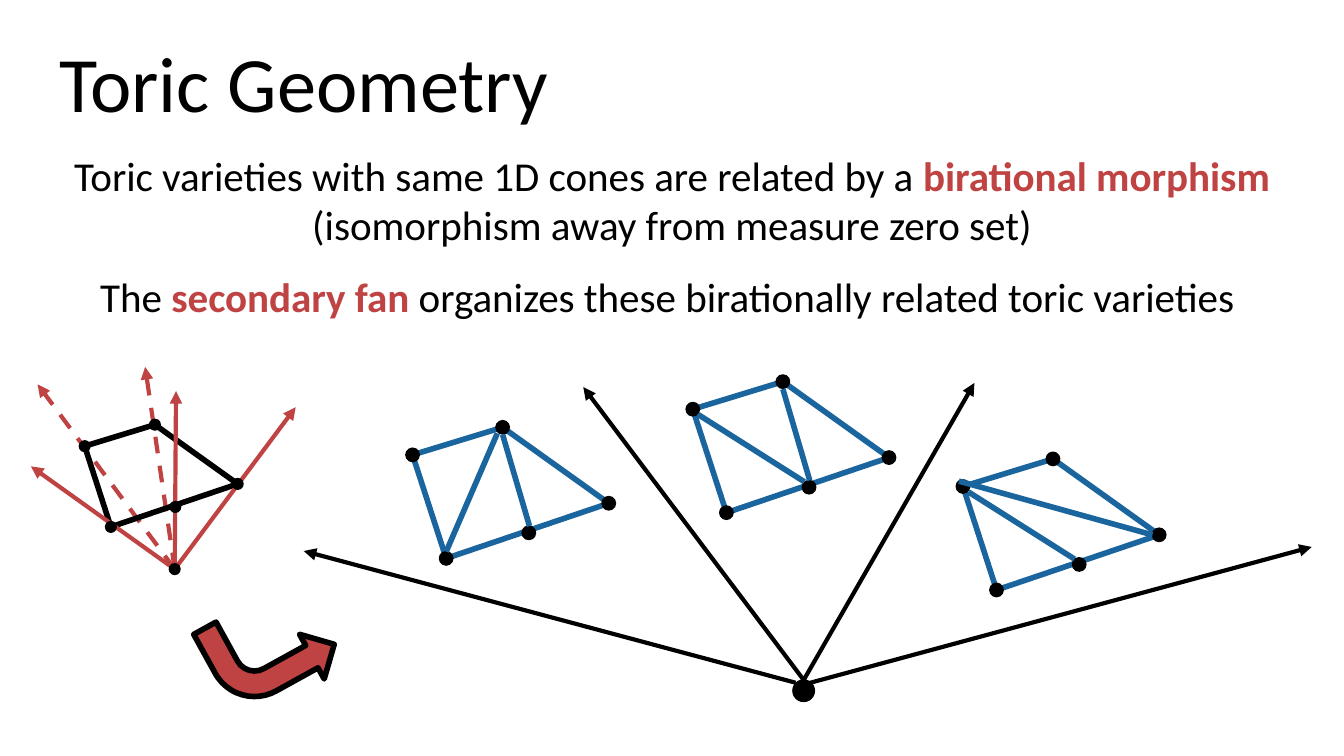
from dataclasses import dataclass

from lxml.etree import SubElement
from pptx import Presentation
from pptx.dml.color import RGBColor
from pptx.enum.dml import MSO_LINE
from pptx.enum.shapes import MSO_CONNECTOR, MSO_SHAPE
from pptx.enum.text import MSO_ANCHOR, PP_ALIGN
from pptx.oxml.ns import qn
from pptx.util import Inches, Pt

COLORS = {"ink": "000000", "red": "BF4342", "blue": "1A659E"}
FONT = "Calibri"
CELL = 0.1  # inches: the 16:9 slide is a grid of 100 columns by 56.25 rows
COLUMNS = 100
ROWS = COLUMNS * 9 / 16

Point = tuple[float, float]


@dataclass(frozen=True)
class Stroke:
    color: str
    width: float
    arrow: bool = False
    dashed: bool = False


@dataclass(frozen=True)
class Polygon:
    """A five-point polygon, placed by its left vertex."""
    left: Point
    scale: float = 1
    diagonals: tuple[str, ...] = ()

    def at(self, offset: Point) -> Point:
        return tuple(start + self.scale * step for start, step in zip(self.left, offset))


# Offsets from the left vertex, in grid cells
VERTICES = {"left": (0, 0), "top": (6.7, -2.05), "bottom": (2.5, 7.7),
            "middle": (8.65, 5.8), "right": (14.6, 3.6)}
OUTLINE = ("top", "right", "bottom", "left", "top")
DIAGONALS = {
    "top-bottom": ((6.3, -1.6), (2.5, 7.2)),
    "top-middle": ((6.7, -1.5), (8.7, 5.3)),
    "left-middle": ((0.4, 0.4), (8.3, 5.4)),
    "left-right": ((-0.3, -0.4), (14.1, 3.6)),
}
TRIANGULATIONS = (
    Polygon((30.7, 33.85), diagonals=("top-bottom", "top-middle")),
    Polygon((51.55, 30.45), diagonals=("left-middle", "top-middle")),
    Polygon((71.65, 36.2), diagonals=("left-middle", "left-right")),
)
CONE_BASE = Polygon((6.3, 33.2), scale=0.78)
CONE_APEX = (13, 42.35)
HIDDEN_RAY_TIPS = ((2.8, 28.6), (10.8, 27.3))
VISIBLE_RAY_TIPS = ((2.3, 34.7), (22, 30.3), (13.1, 29.1))
FAN_APEX = (59.8, 51.4)
FAN_RAYS = (((59.8, 50.6), (43.4, 28.8)), ((60.3, 50.8), (97.6, 40.7)),
            ((59.8, 50.6), (72.5, 28.5)), ((59.2, 50.8), (22.6, 41)))

EDGE = Stroke("blue", 3)
BASE_EDGE = Stroke("ink", 3)
FAN_RAY = Stroke("ink", 2.25, arrow=True)
CONE_RAY = Stroke("red", 2.25, arrow=True)
HIDDEN_RAY = Stroke("red", 2.25, arrow=True, dashed=True)

BODY = (
    (("Toric varieties with same 1D cones are related by a ", False),
     ("birational morphism", True),
     (" (isomorphism away from measure zero set)", False)),
    (("The ", False), ("secondary fan", True),
     (" organizes these birationally related toric varieties ", False)),
)


def cells(*counts: float) -> list[int]:
    return [Inches(count * CELL) for count in counts]


def rgb(name: str) -> RGBColor:
    return RGBColor.from_string(COLORS[name])


def apply_format(target, values: dict) -> None:
    for name, value in values.items():
        setattr(target, name, value)


def place(shape, left: float, top: float, width: float, height: float) -> None:
    box = cells(left, top, width, height)
    apply_format(shape, dict(zip(("left", "top", "width", "height"), box)))


def format_frame(frame) -> None:
    margin = Inches(0.1)
    apply_format(frame, {"word_wrap": True, "margin_left": margin, "margin_right": margin,
                         "margin_top": margin, "margin_bottom": margin})


def add_run(paragraph, text: str, size: float, color: str = "ink", bold: bool = False) -> None:
    run = paragraph.add_run()
    run.text = text
    apply_format(run.font, {"name": FONT, "size": Pt(size), "bold": bold})
    run.font.color.rgb = rgb(color)


def add_line(shapes, start: Point, end: Point, stroke: Stroke) -> None:
    connector = shapes.add_connector(MSO_CONNECTOR.STRAIGHT, *cells(*start, *end))
    connector.line.color.rgb = rgb(stroke.color)
    connector.line.width = Pt(stroke.width)
    if stroke.dashed:
        connector.line.dash_style = MSO_LINE.DASH
    properties = connector._element.spPr
    if stroke.arrow:
        SubElement(properties.find(qn("a:ln")), qn("a:tailEnd"), type="triangle")
    SubElement(properties, qn("a:effectLst"))


def style_shape(shape, fill: str, line_width: float) -> None:
    shape.shadow.inherit = False
    shape.fill.solid()
    shape.fill.fore_color.rgb = rgb(fill)
    shape.line.color.rgb = rgb("ink")
    shape.line.width = Pt(line_width)


def add_dot(shapes, center: Point, size: float) -> None:
    corner = [value - size / 2 for value in center]
    dot = shapes.add_shape(MSO_SHAPE.OVAL, *cells(*corner, size, size))
    style_shape(dot, "ink", 0.75)


def add_outline(shapes, polygon: Polygon, stroke: Stroke) -> None:
    corners = [polygon.at(VERTICES[name]) for name in OUTLINE]
    for start, end in zip(corners, corners[1:]):
        add_line(shapes, start, end, stroke)


def add_triangulation(shapes, polygon: Polygon) -> None:
    add_outline(shapes, polygon, EDGE)
    for offset in VERTICES.values():
        add_dot(shapes, polygon.at(offset), 1)
    for name in polygon.diagonals:
        start, end = DIAGONALS[name]
        add_line(shapes, polygon.at(start), polygon.at(end), EDGE)


def add_cone(shapes) -> None:
    for tip in HIDDEN_RAY_TIPS:
        add_line(shapes, CONE_APEX, tip, HIDDEN_RAY)
    add_outline(shapes, CONE_BASE, BASE_EDGE)
    for tip in VISIBLE_RAY_TIPS:
        add_line(shapes, CONE_APEX, tip, CONE_RAY)
    for offset in VERTICES.values():
        add_dot(shapes, CONE_BASE.at(offset), 0.8)
    add_dot(shapes, CONE_APEX, 0.8)


def add_fan(shapes) -> None:
    add_dot(shapes, FAN_APEX, 1.6)
    for start, tip in FAN_RAYS:
        add_line(shapes, start, tip, FAN_RAY)


def add_bent_arrow(shapes) -> None:
    arrow = shapes.add_shape(MSO_SHAPE.BENT_ARROW, *cells(15.7, 44.6, 8.8, 7.6))
    for index, value in enumerate((0.25, 0.25, 0.25, 0.44)):
        arrow.adjustments[index] = value
    arrow.rotation = 151.1
    arrow._element.spPr.find(qn("a:xfrm")).set("flipH", "1")
    style_shape(arrow, "red", 3)


def add_title(shapes) -> None:
    title = shapes.title
    place(title, 3.4, 1.5, 93.2, 9.3)
    format_frame(title.text_frame)
    title.text_frame.vertical_anchor = MSO_ANCHOR.TOP
    paragraph = title.text_frame.paragraphs[0]
    paragraph.alignment = PP_ALIGN.LEFT
    add_run(paragraph, "Toric Geometry", 42)


def add_body(shapes) -> None:
    frame = shapes.add_textbox(*cells(0.9, 10.2, 98.2, 14.8)).text_frame
    format_frame(frame)
    for index, parts in enumerate(BODY):
        paragraph = frame.add_paragraph() if index else frame.paragraphs[0]
        apply_format(paragraph, {"alignment": PP_ALIGN.CENTER,
                                 "space_before": Pt(12 if index else 0)})
        for text, is_term in parts:
            add_run(paragraph, text, 22, "red" if is_term else "ink", is_term)


def main() -> None:
    presentation = Presentation()
    presentation.slide_width, presentation.slide_height = cells(COLUMNS, ROWS)
    shapes = presentation.slides.add_slide(presentation.slide_layouts[5]).shapes
    for add_part in (add_title, add_body, add_fan, add_cone):
        add_part(shapes)
    for polygon in TRIANGULATIONS:
        add_triangulation(shapes, polygon)
    add_bent_arrow(shapes)
    presentation.save("out.pptx")


if __name__ == "__main__":
    main()
